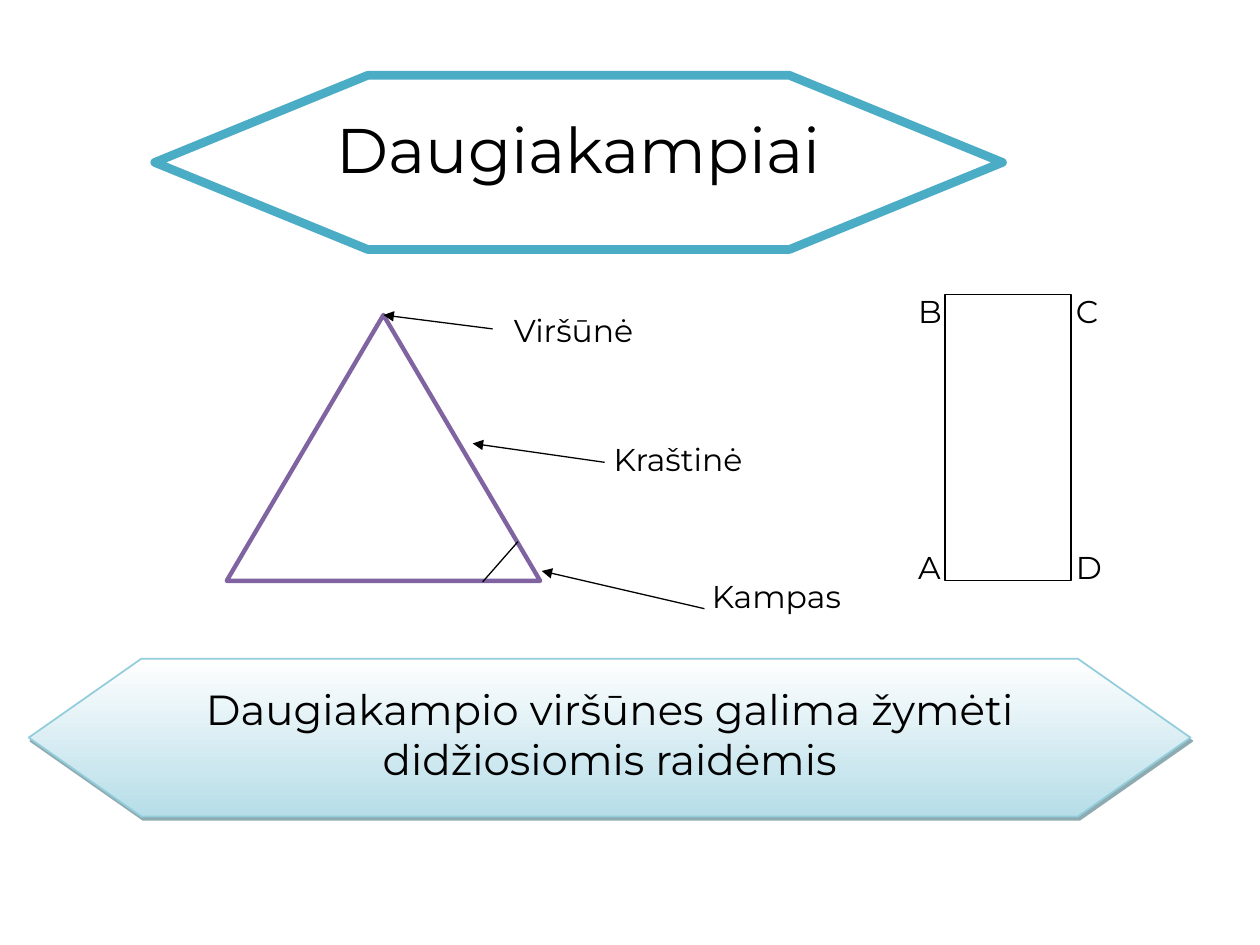
from dataclasses import dataclass

from lxml import etree
from pptx import Presentation
from pptx import util as u
from pptx.dml.color import RGBColor
from pptx.enum import shapes, text
from pptx.oxml import ns


@dataclass(frozen=True)
class Theme:
    font: str = "Montserrat"
    ink: str = "000000"
    paper: str = "FFFFFF"
    teal: str = "4BACC6"
    purple: str = "8064A2"
    banner_end: str = "B6DDE8"
    banner_line: str = "92CDDC"
    banner_shadow: str = "205867"
    title_size: int = 36
    banner_size: int = 24
    label_size: int = 18


THEME = Theme()
SHAPE = shapes.MSO_SHAPE


def rgb(color):
    return RGBColor.from_string(color)


def cm(*lengths):
    return [u.Cm(length) for length in lengths]


def add_xml(parent, tag, **attributes):
    return etree.SubElement(parent, ns.qn(tag), attributes)


def write(shape, words, size, align=text.PP_ALIGN.LEFT):
    frame = shape.text_frame
    frame.word_wrap = True
    frame.vertical_anchor = text.MSO_ANCHOR.TOP
    frame.text = words
    paragraph = frame.paragraphs[0]
    paragraph.alignment = align
    paragraph.font.name = THEME.font
    paragraph.font.size = u.Pt(size)
    paragraph.font.color.rgb = rgb(THEME.ink)


def add_figure(slide, kind, box, line_color, line_width, adjustment=None):
    """Add a white outlined preset shape without a shadow."""
    shape = slide.shapes.add_shape(kind, *cm(*box))
    shape.shadow.inherit = False
    shape.fill.solid()
    shape.fill.fore_color.rgb = rgb(THEME.paper)
    shape.line.color.rgb = rgb(line_color)
    shape.line.width = u.Pt(line_width)
    if adjustment is not None:
        shape.adjustments[0] = adjustment
    return shape


def add_line(slide, start, end, arrow=True):
    line = slide.shapes.add_connector(
        shapes.MSO_CONNECTOR.STRAIGHT, *cm(*start, *end))
    line.line.color.rgb = rgb(THEME.ink)
    line.line.width = u.Pt(0.75)
    if arrow:
        add_xml(line.line._get_or_add_ln(), "a:tailEnd", type="triangle")
    add_xml(line.element.spPr, "a:effectLst")
    return line


def add_label(slide, words, left, top, width, height=1.02):
    box = slide.shapes.add_textbox(*cm(left, top, width, height))
    write(box, words, THEME.label_size)
    box.text_frame.auto_size = text.MSO_AUTO_SIZE.SHAPE_TO_FIT_TEXT


def add_title(slide, words):
    """Lay the title placeholder over its hexagon frame."""
    left, top, width, height = 3.12, 1.52, 17.09, 3.51
    frame = add_figure(slide, SHAPE.HEXAGON, (left, top, width, height),
                       THEME.teal, 5, 1.223)
    title = slide.shapes.title
    title.left, title.top, title.width, title.height = cm(
        left + width / 6, top + height / 6, width * 2 / 3, height * 2 / 3)
    write(title, words, THEME.title_size, text.PP_ALIGN.CENTER)
    title.text_frame.auto_size = text.MSO_AUTO_SIZE.NONE
    frame.element.addnext(title.element)


def add_banner(slide, words):
    banner = add_figure(slide, SHAPE.HEXAGON, (0.58, 13.28, 23.42, 3.18),
                        THEME.banner_line, 1, 0.714)
    banner.fill.gradient()
    banner.fill.gradient_angle = 270
    for stop, position, color in zip(banner.fill.gradient_stops, (0, 1),
                                     (THEME.paper, THEME.banner_end)):
        stop.position = position
        stop.color.rgb = rgb(color)
    effects = banner.element.spPr.find(ns.qn("a:effectLst"))
    shadow = add_xml(effects, "a:outerShdw", dist=str(u.Pt(2.2)),
                     dir=str(63 * 60000), algn="ctr", rotWithShape="0")
    color = add_xml(shadow, "a:srgbClr", val=THEME.banner_shadow)
    add_xml(color, "a:alpha", val="50000")
    write(banner, words, THEME.banner_size, text.PP_ALIGN.CENTER)


def add_triangle(slide):
    """Draw the triangle with its vertex, side and angle pointed out."""
    triangle = add_figure(slide, SHAPE.ISOSCELES_TRIANGLE,
                          (4.57, 6.35, 6.32, 5.36), THEME.purple, 2.5)
    vertex_arrow = add_line(slide, (9.93, 6.63), (7.73, 6.35))
    vertex_arrow.end_connect(triangle, 0)
    add_line(slide, (12.19, 9.32), (9.53, 8.94))
    add_line(slide, (14.2, 12.27), (10.92, 11.51))
    add_line(slide, (10.44, 10.92), (9.73, 11.73), arrow=False)


def add_labels(slide):
    add_label(slide, "Viršūnė", 10.11, 6.15, 3.38)
    add_label(slide, "Kraštinė", 12.12, 8.74, 3.96)
    add_label(slide, "Kampas", 14.1, 11.51, 3.38)
    left, right, top, bottom = 18.26, 21.44, 5.77, 10.92
    add_label(slide, "A", left, bottom, 0.99)
    add_label(slide, "B", left, top, 0.79, 1.8)
    add_label(slide, "C", right, top, 2.39)
    add_label(slide, "D", right, bottom, 1.19)


def main():
    presentation = Presentation()
    presentation.slide_width, presentation.slide_height = cm(25.4, 19.05)
    title_only = presentation.slide_layouts[5]
    slide = presentation.slides.add_slide(title_only)
    add_title(slide, "Daugiakampiai")
    add_triangle(slide)
    add_figure(slide, SHAPE.RECTANGLE, (19.05, 5.94, 2.54, 5.77),
               THEME.ink, 0.75)
    add_banner(slide,
               "Daugiakampio viršūnes galima žymėti didžiosiomis raidėmis")
    add_labels(slide)
    presentation.save("out.pptx")


if __name__ == "__main__":
    main()
